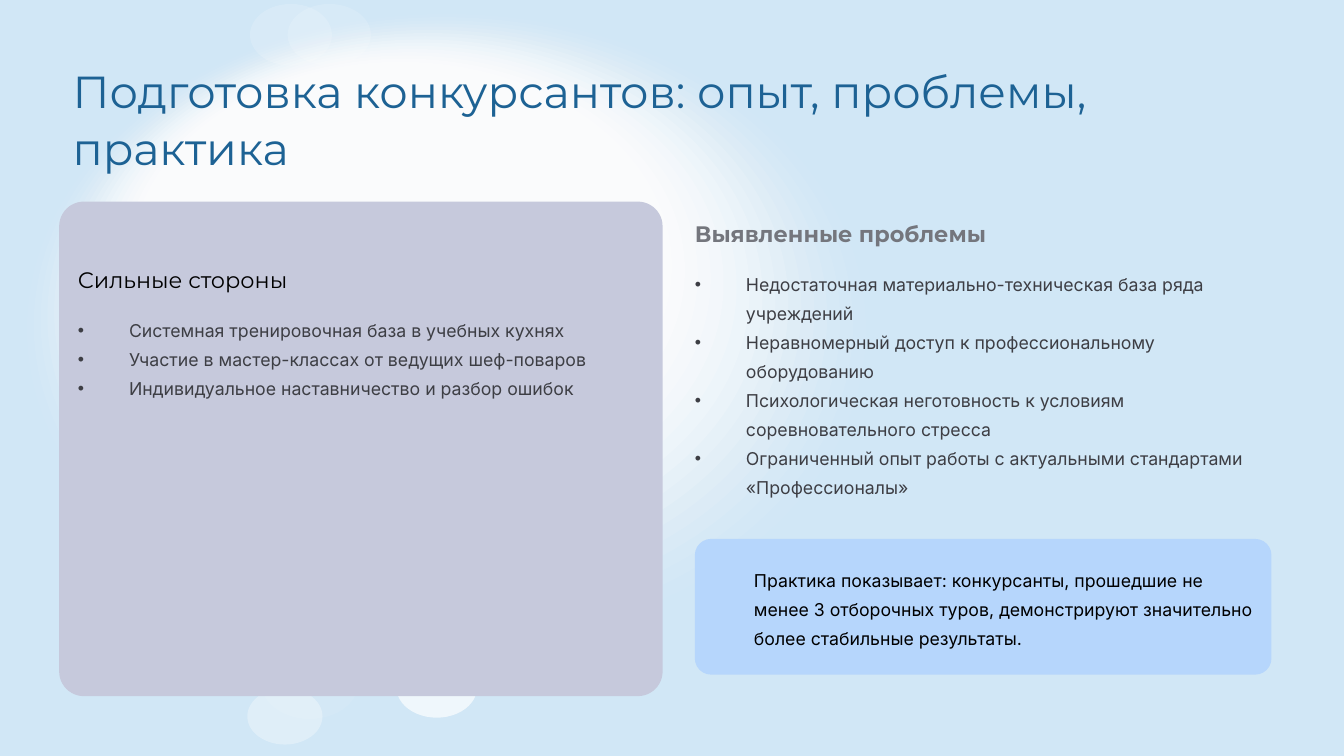
from lxml import etree
from pptx import Presentation
from pptx.dml.color import RGBColor
from pptx.enum.shapes import MSO_SHAPE
from pptx.enum.text import MSO_ANCHOR, MSO_AUTO_SIZE, PP_ALIGN
from pptx.oxml.ns import qn
from pptx.util import Inches, Pt

OVAL, ROUNDED = MSO_SHAPE.OVAL, MSO_SHAPE.ROUNDED_RECTANGLE
TOP, LEFT = MSO_ANCHOR.TOP, PP_ALIGN.LEFT
NO_AUTOFIT = MSO_AUTO_SIZE.NONE
COMPARISON_LAYOUT = 4
SLIDE_WIDTH = 10
SLIDE_HEIGHT = SLIDE_WIDTH * 9 / 16

COLORS = {
    "sky": "D1E7F6", "white": "FFFFFF", "title": "1D6294", "black": "000000",
    "muted": "74767D", "body": "3D3E44", "lilac": "C6C9DC", "blue": "B6D6FC",
}

# font, size, colour, bold, line spacing
STYLES = {
    "title": ("Montserrat", 24, "title", False, 30.5),
    "strengths": ("Montserrat", 12, "black", False, 15),
    "problems": ("Montserrat", 12, "muted", True, 15),
    "list": ("Inter", 9.5, "body", False, 15.5),
    "callout": ("Inter", 9.5, "black", False, 15.5),
}

STRENGTHS = [
    "Системная тренировочная база в учебных кухнях",
    "Участие в мастер-классах от ведущих шеф-поваров",
    "Индивидуальное наставничество и разбор ошибок",
]
PROBLEMS = [
    "Недостаточная материально-техническая база ряда учреждений",
    "Неравномерный доступ к профессиональному оборудованию",
    "Психологическая неготовность к условиям соревновательного стресса",
    "Ограниченный опыт работы с актуальными стандартами «Профессионалы»",
]
CALLOUT = [
    "Практика показывает: конкурсанты, прошедшие не менее 3 отборочных туров, "
    "демонстрируют значительно более стабильные результаты."
]
CALLOUT_BOX = (5.61, 4.18, 3.72, 0.65)

# placeholder index, box, lines, style
TEXTS = [
    (0, (0.54, 0.45, 8.91, 0.85),
     ["Подготовка конкурсантов: опыт, проблемы, практика"], "title"),
    (1, (0.58, 1.97, 1.6, 0.21), ["Сильные стороны"], "strengths"),
    (2, (0.58, 2.32, 4.22, 0.75), STRENGTHS, "list"),
    (3, (5.17, 1.63, 2.2, 0.21), ["Выявленные проблемы"], "problems"),
    (4, (5.17, 1.98, 4.29, 1.88), PROBLEMS, "list"),
]

GLOW_STEPS = 16
GLOW_OUTER = (0.15, 0.08, 6.39, 4.8)
GLOW_INNER = (0.96, 0.46, 4.04, 3.04)

# box, opacity in percent
BUBBLES = [
    ((1.94, 4.8, 0.73, 0.55), 7),
    ((1.84, 5.12, 0.56, 0.42), 31),
    ((2.95, 4.89, 0.6, 0.45), 67),
    ((2.49, 4.58, 0.8, 0.6), 31),
    ((2.14, 0.03, 0.62, 0.46), 15),
    ((1.86, 0.03, 0.61, 0.46), 16),
]

# box, colour, corner radius
CARDS = [
    ((0.44, 1.5, 4.49, 3.68), "lilac", 0.05),
    ((5.17, 4.01, 4.29, 1.01), "blue", 0.12),
]


def rgb(name):
    return RGBColor.from_string(COLORS[name])


def add_filled_shape(slide, kind, box, color):
    shape = slide.shapes.add_shape(kind, *map(Inches, box))
    shape.shadow.inherit = False
    shape.fill.solid()
    shape.fill.fore_color.rgb = rgb(color)
    shape.line.fill.background()
    return shape


def add_bubble(slide, box, opacity):
    bubble = add_filled_shape(slide, OVAL, box, "white")
    color = next(bubble.element.iter(qn("a:srgbClr")))
    etree.SubElement(color, qn("a:alpha"), val=str(round(opacity * 1000)))


def add_bullet(paragraph):
    properties = paragraph._p.get_or_add_pPr()
    properties.set("marL", str(Inches(0.38)))
    properties.set("indent", str(-Inches(0.38)))
    etree.SubElement(properties, qn("a:buChar"), char="•")


def write_text(frame, lines, style):
    font_name, size, color, bold, spacing = STYLES[style]
    frame.word_wrap = True
    frame.auto_size = NO_AUTOFIT
    frame.vertical_anchor = TOP
    frame.margin_left = frame.margin_right = 0
    frame.margin_top = frame.margin_bottom = 0
    for number, line in enumerate(lines):
        paragraph = frame.add_paragraph() if number else frame.paragraphs[0]
        if style == "list":
            add_bullet(paragraph)
        paragraph.alignment = LEFT
        paragraph.line_spacing = Pt(spacing)
        paragraph.space_before = Pt(0)
        run = paragraph.add_run()
        run.text = line
        run.font.name = font_name
        run.font.size = Pt(size)
        run.font.bold = bold
        run.font.color.rgb = rgb(color)


def fill_placeholder(slide, index, box, lines, style):
    """Fill a placeholder and bring it in front of the cards."""
    placeholder = next(shape for shape in slide.placeholders
                       if shape.placeholder_format.idx == index)
    (placeholder.left, placeholder.top,
     placeholder.width, placeholder.height) = map(Inches, box)
    write_text(placeholder.text_frame, lines, style)
    placeholder.element.getparent().append(placeholder.element)


def main():
    presentation = Presentation()
    presentation.slide_width = Inches(SLIDE_WIDTH)
    presentation.slide_height = Inches(SLIDE_HEIGHT)
    layout = presentation.slide_layouts[COMPARISON_LAYOUT]
    slide = presentation.slides.add_slide(layout)
    slide.background.fill.solid()
    slide.background.fill.fore_color.rgb = rgb("sky")

    for step in range(1, GLOW_STEPS + 1):
        box = [outer + (inner - outer) * step / GLOW_STEPS
               for outer, inner in zip(GLOW_OUTER, GLOW_INNER)]
        add_bubble(slide, box, 1.4 + 1.6 * step)
    for box, opacity in BUBBLES:
        add_bubble(slide, box, opacity)
    for box, color, radius in CARDS:
        card = add_filled_shape(slide, ROUNDED, box, color)
        card.adjustments[0] = radius

    for text in TEXTS:
        fill_placeholder(slide, *text)
    callout = slide.shapes.add_textbox(*map(Inches, CALLOUT_BOX))
    write_text(callout.text_frame, CALLOUT, "callout")

    presentation.save("out.pptx")


if __name__ == "__main__":
    main()
